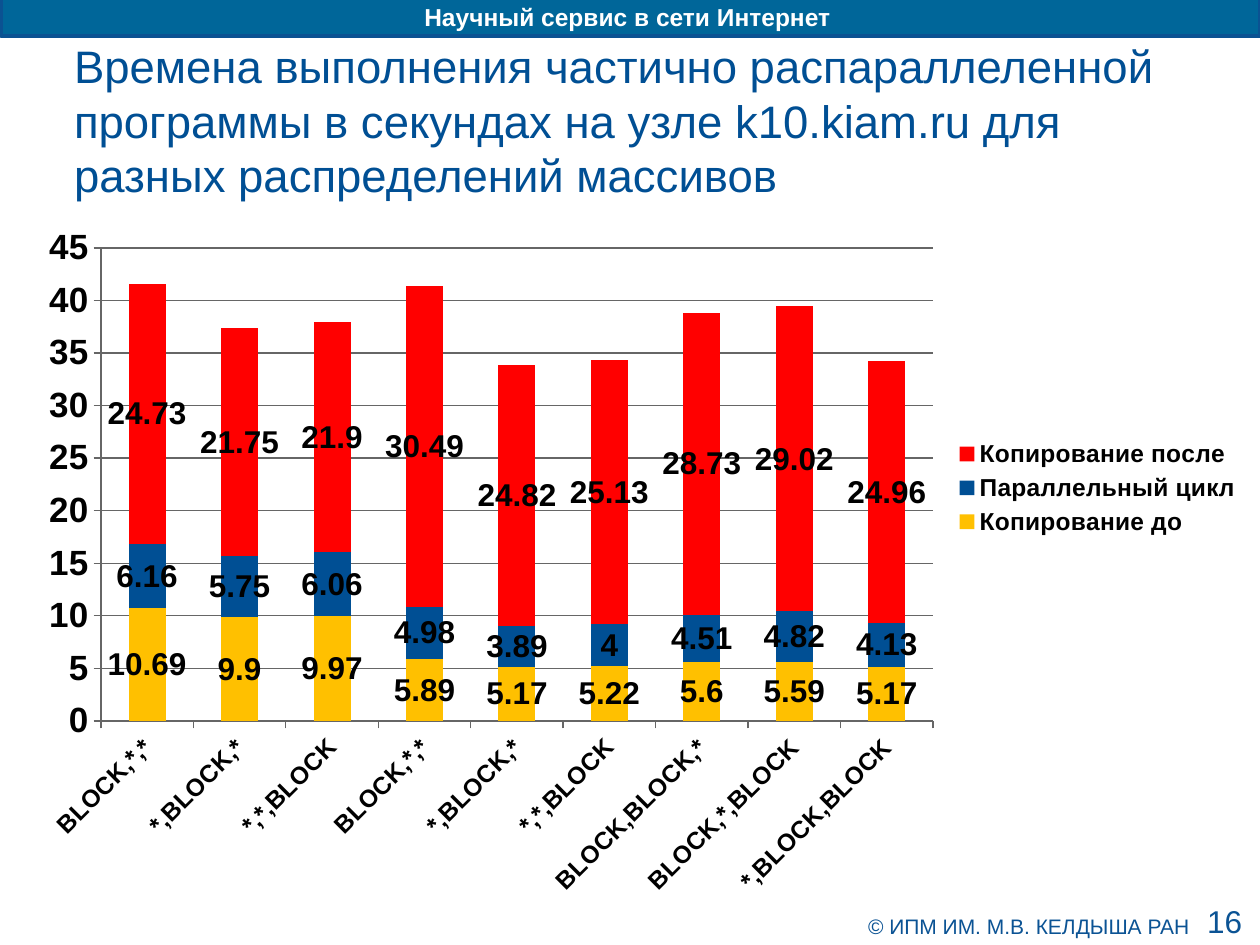
from dataclasses import dataclass
from typing import NamedTuple

from lxml import etree
from pptx import Presentation
from pptx.chart.data import CategoryChartData
from pptx.dml.color import RGBColor
from pptx.enum.chart import XL_CHART_TYPE, XL_LEGEND_POSITION, XL_TICK_MARK
from pptx.enum.shapes import MSO_SHAPE
from pptx.enum.text import MSO_ANCHOR, MSO_AUTO_SIZE, PP_ALIGN
from pptx.util import Emu, Pt

STACKED = XL_CHART_TYPE.COLUMN_STACKED
RIGHT_SIDE = XL_LEGEND_POSITION.RIGHT
OUTSIDE = XL_TICK_MARK.OUTSIDE
RECT = MSO_SHAPE.RECTANGLE
TOP, MIDDLE = MSO_ANCHOR.TOP, MSO_ANCHOR.MIDDLE
LEFT, CENTER, RIGHT = PP_ALIGN.LEFT, PP_ALIGN.CENTER, PP_ALIGN.RIGHT
NO_FIT = MSO_AUTO_SIZE.NONE
DPI = 126


@dataclass(frozen=True)
class Theme:
    font: str = "Arial"
    navy: str = "004F94"
    blue: str = "0B5394"
    edge: str = "0B5292"
    teal: str = "006699"
    gold: str = "FFC000"
    red: str = "FF0000"
    white: str = "FFFFFF"
    black: str = "000000"
    grid: str = "666666"
    title: int = 26
    value: int = 20
    label: int = 18
    small: int = 14
    foot: int = 12


class Box(NamedTuple):
    x: int
    y: int
    w: int
    h: int


class Note(NamedTuple):
    text: str
    box: Box
    size: int
    color: str
    align: PP_ALIGN
    bold: bool = False
    anchor: MSO_ANCHOR = TOP
    pad: tuple[int, int] = (13, 6)


class Part(NamedTuple):
    name: str
    color: str
    vals: list[float]


THEME = Theme()

NOTES = [
    Note("Научный сервис в сети Интернет", Box(-5, -4, 1265, 43),
         THEME.small, THEME.white, CENTER, bold=True),
    Note("© ИПМ ИМ. М.В. КЕЛДЫША РАН", Box(868, 908, 535, 37),
         THEME.foot, THEME.blue, LEFT, anchor=MIDDLE, pad=(0, 0)),
    Note("16", Box(1150, 896, 105, 47), THEME.label, THEME.blue, RIGHT),
]
TITLE = Note(
    "Времена выполнения частично распараллеленной программы в секундах "
    "на узле k10.kiam.ru для разных распределений массивов",
    Box(74, 38, 1134, 157), THEME.title, THEME.navy, LEFT, pad=(0, 0))

ONE_WAY = ["BLOCK,*,*", "*,BLOCK,*", "*,*,BLOCK"]
TWO_WAY = ["BLOCK,BLOCK,*", "BLOCK,*,BLOCK", "*,BLOCK,BLOCK"]
PARTS = [
    Part("Копирование до", THEME.gold,
         [10.69, 9.9, 9.97, 5.89, 5.17, 5.22, 5.6, 5.59, 5.17]),
    Part("Параллельный цикл", THEME.navy,
         [6.16, 5.75, 6.06, 4.98, 3.89, 4, 4.51, 4.82, 4.13]),
    Part("Копирование после", THEME.red,
         [24.73, 21.75, 21.9, 30.49, 24.82, 25.13, 28.73, 29.02, 24.96]),
]
CHART = Box(25, 214, 1235, 694)
PLOT = Box(101, 248, 832, 473)
LEGEND = Box(955, 434, 285, 108)


def px(n: int) -> Emu:
    return Emu(round(n * 914400 / DPI))


def place(box: Box) -> list[Emu]:
    return [px(n) for n in box]


def rgb(code: str) -> RGBColor:
    return RGBColor.from_string(code)


def style(font, size: int, color: str, bold: bool) -> None:
    font.name, font.size, font.bold = THEME.font, Pt(size), bold
    font.color.rgb = rgb(color)


def write(shape, note: Note) -> None:
    frame = shape.text_frame
    frame.word_wrap, frame.auto_size = True, NO_FIT
    frame.vertical_anchor = note.anchor
    frame.margin_left = frame.margin_right = px(note.pad[0])
    frame.margin_top = frame.margin_bottom = px(note.pad[1])
    frame.text = note.text
    para = frame.paragraphs[0]
    para.alignment = note.align
    style(para.font, note.size, note.color, note.bold)


def add_bar(slide) -> None:
    bar = slide.shapes.add_shape(RECT, *place(Box(1, -4, 1259, 40)))
    bar.shadow.inherit = False
    bar.fill.solid()
    bar.fill.fore_color.rgb = rgb(THEME.teal)
    bar.line.color.rgb = rgb(THEME.edge)
    bar.line.width = Pt(2)


def add_title(slide) -> None:
    title = slide.shapes.title
    title.left, title.top, title.width, title.height = place(TITLE.box)
    write(title, TITLE)


def pin(area, box: Box, index: int, inner: bool = False) -> None:
    """Fix a chart part's place as fractions of the chart frame."""
    uri = area.nsmap["c"]
    for old in area.findall(f"{{{uri}}}layout"):
        area.remove(old)
    layout = etree.Element(f"{{{uri}}}layout")
    manual = etree.SubElement(layout, f"{{{uri}}}manualLayout")
    rules = {"layoutTarget": "inner"} if inner else {}
    rules |= {
        "xMode": "edge", "yMode": "edge",
        "x": f"{(box.x - CHART.x) / CHART.w:.4f}",
        "y": f"{(box.y - CHART.y) / CHART.h:.4f}",
        "w": f"{box.w / CHART.w:.4f}", "h": f"{box.h / CHART.h:.4f}",
    }
    for tag, val in rules.items():
        etree.SubElement(manual, f"{{{uri}}}{tag}", val=val)
    area.insert(index, layout)


def set_axis(axis, size: int) -> None:
    style(axis.tick_labels.font, size, THEME.black, True)
    axis.major_tick_mark = OUTSIDE
    axis.format.line.color.rgb = rgb(THEME.grid)


def add_chart(slide) -> None:
    data = CategoryChartData()
    data.categories = ONE_WAY * 2 + TWO_WAY
    for part in PARTS:
        data.add_series(part.name, part.vals)
    chart = slide.shapes.add_chart(STACKED, *place(CHART), data).chart
    chart.has_title = False
    style(chart.font, THEME.small, THEME.black, True)

    # Bars and their values
    plot = chart.plots[0]
    plot.gap_width, plot.overlap = 150, 100
    plot.vary_by_categories = False
    for series, part in zip(plot.series, PARTS):
        series.format.fill.solid()
        series.format.fill.fore_color.rgb = rgb(part.color)
        labels = series.data_labels
        labels.show_value = True
        style(labels.font, THEME.label, THEME.black, True)
    pin(plot._element.getparent(), PLOT, 0, inner=True)

    # Axes
    cat, val = chart.category_axis, chart.value_axis
    set_axis(cat, THEME.small)
    cat._element.txPr.bodyPr.set("rot", "-2700000")
    set_axis(val, THEME.value)
    val.minimum_scale, val.maximum_scale, val.major_unit = 0, 45, 5
    val.has_major_gridlines = True
    val.major_gridlines.format.line.color.rgb = rgb(THEME.grid)

    # Legend
    chart.has_legend = True
    legend = chart.legend
    legend.position = RIGHT_SIDE
    legend.include_in_layout = False
    style(legend.font, THEME.small, THEME.black, True)
    pin(legend._element, LEGEND, 1)


def main() -> None:
    deck = Presentation()
    deck.slide_width, deck.slide_height = px(1260), px(945)
    slide = deck.slides.add_slide(deck.slide_layouts[5])
    add_bar(slide)
    add_title(slide)
    for note in NOTES:
        write(slide.shapes.add_textbox(*place(note.box)), note)
    add_chart(slide)
    deck.save("out.pptx")


if __name__ == "__main__":
    main()
